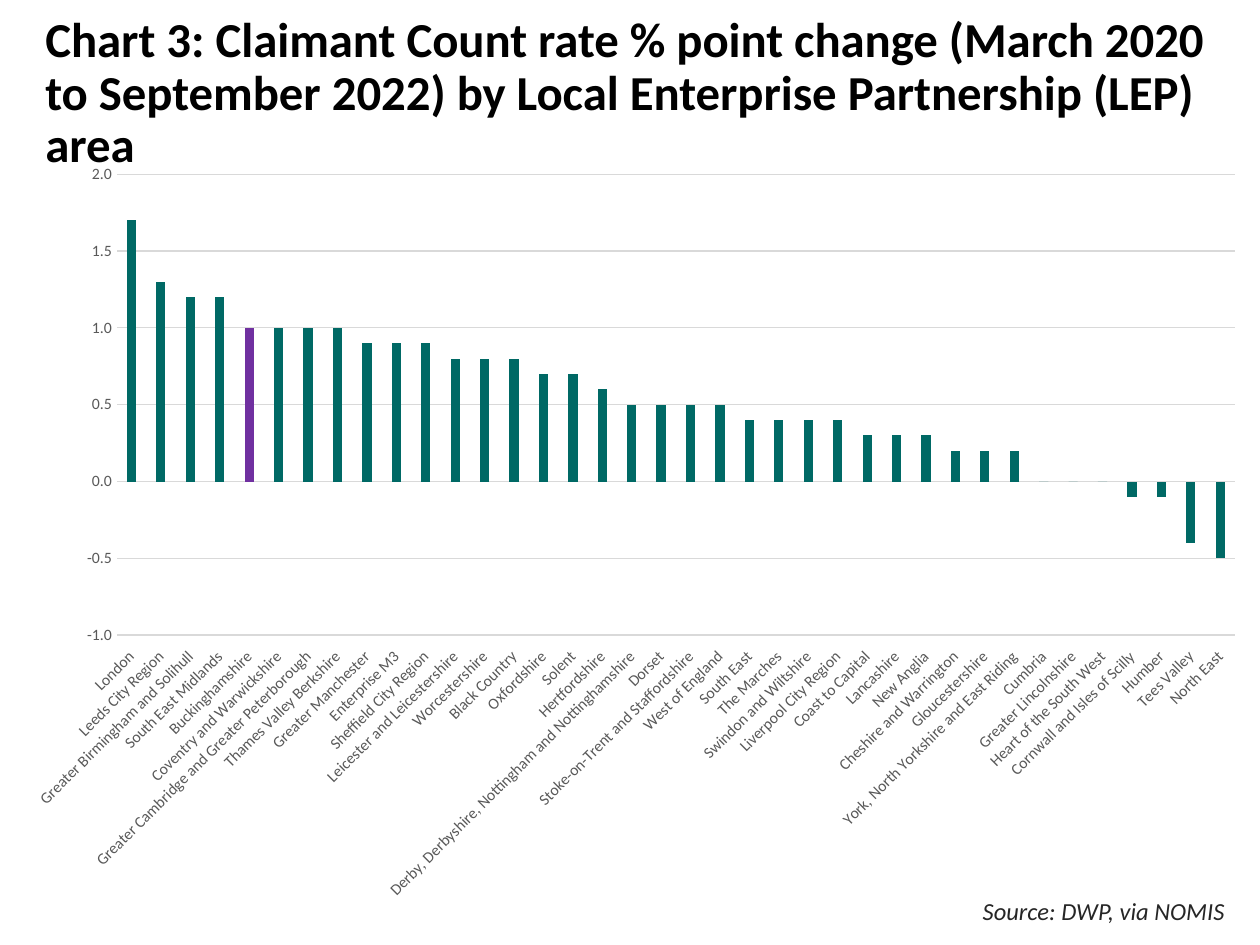
from pptx import Presentation
from pptx.chart.data import CategoryChartData
from pptx.dml.color import RGBColor
from pptx.enum import chart as ch, text
from pptx.util import Cm, Pt

BLACK = RGBColor(0x00, 0x00, 0x00)
DARK = RGBColor(0x26, 0x26, 0x26)
GREY = RGBColor(0x59, 0x59, 0x59)
RULE = RGBColor(0xD9, 0xD9, 0xD9)
TEAL = RGBColor(0x00, 0x69, 0x65)
PURPLE = RGBColor(0x70, 0x30, 0xA0)

HIGHLIGHT = "Buckinghamshire"
AREAS_BY_CHANGE = {
    1.7: ["London"],
    1.3: ["Leeds City Region"],
    1.2: ["Greater Birmingham and Solihull", "South East Midlands"],
    1.0: [HIGHLIGHT, "Coventry and Warwickshire",
          "Greater Cambridge and Greater Peterborough", "Thames Valley Berkshire"],
    0.9: ["Greater Manchester", "Enterprise M3", "Sheffield City Region"],
    0.8: ["Leicester and Leicestershire", "Worcestershire", "Black Country"],
    0.7: ["Oxfordshire", "Solent"],
    0.6: ["Hertfordshire"],
    0.5: ["Derby, Derbyshire, Nottingham and Nottinghamshire", "Dorset",
          "Stoke-on-Trent and Staffordshire", "West of England"],
    0.4: ["South East", "The Marches", "Swindon and Wiltshire", "Liverpool City Region"],
    0.3: ["Coast to Capital", "Lancashire", "New Anglia"],
    0.2: ["Cheshire and Warrington", "Gloucestershire",
          "York, North Yorkshire and East Riding"],
    0.0: ["Cumbria", "Greater Lincolnshire", "Heart of the South West"],
    -0.1: ["Cornwall and Isles of Scilly", "Humber"],
    -0.4: ["Tees Valley"],
    -0.5: ["North East"],
}


class SlideBuilder:
    """Holds the style and the current slide, and adds each kind of element."""

    def __init__(self, slide, font="Calibri"):
        self.slide = slide
        self.font = font

    def style(self, font, size, color, bold=False, italic=False):
        font.name, font.size = self.font, Pt(size)
        font.bold, font.italic = bold, italic
        font.color.rgb = color

    def title(self, wording, left, top, width, height):
        heading = self.slide.shapes.title
        heading.left, heading.top, heading.width, heading.height = map(
            Cm, (left, top, width, height))
        frame = heading.text_frame
        frame.word_wrap = True
        frame.auto_size = text.MSO_AUTO_SIZE.NONE
        frame.vertical_anchor = text.MSO_ANCHOR.MIDDLE
        frame.margin_bottom = Cm(1.2)
        line = frame.paragraphs[0]
        line.alignment = text.PP_ALIGN.LEFT
        line.line_spacing = 0.9
        run = line.add_run()
        run.text = wording
        self.style(run.font, 27.9, BLACK, bold=True)

    def source(self, wording, left, top, width, height):
        frame = self.slide.shapes.add_textbox(
            *map(Cm, (left, top, width, height))).text_frame
        frame.word_wrap = True
        frame.auto_size = text.MSO_AUTO_SIZE.SHAPE_TO_FIT_TEXT
        line = frame.paragraphs[0]
        line.alignment = text.PP_ALIGN.RIGHT
        run = line.add_run()
        run.text = wording
        self.style(run.font, 14, DARK, italic=True)

    def columns(self, areas_by_change, highlight, left, top, width, height):
        pairs = [(area, change) for change, areas in areas_by_change.items()
                 for area in areas]
        areas, changes = zip(*pairs)
        data = CategoryChartData(number_format="#,##0.0")
        data.categories = areas
        data.add_series("Series 1", changes)
        chart = self.slide.shapes.add_chart(
            ch.XL_CHART_TYPE.COLUMN_CLUSTERED,
            *map(Cm, (left, top, width, height)), data).chart
        chart.has_legend = chart.has_title = False
        self.style(chart.font, 10, BLACK)

        plot = chart.plots[0]
        plot.gap_width, plot.overlap = 219, -27
        plot.vary_by_categories = False
        bars = plot.series[0]
        bars.invert_if_negative = False
        for bar, color in ((bars, TEAL), (bars.points[areas.index(highlight)], PURPLE)):
            bar.format.fill.solid()
            bar.format.fill.fore_color.rgb = color

        for axis in (chart.category_axis, chart.value_axis):
            axis.major_tick_mark = axis.minor_tick_mark = ch.XL_TICK_MARK.NONE
            self.style(axis.tick_labels.font, 9, GREY)
        area_axis, change_axis = chart.category_axis, chart.value_axis
        area_axis.tick_label_position = ch.XL_TICK_LABEL_POSITION.LOW
        body = area_axis.tick_labels.font._element.getparent().getparent().getparent().bodyPr
        body.set("rot", "-2700000")
        body.set("vert", "horz")
        change_axis.minimum_scale, change_axis.maximum_scale = -1, 2
        change_axis.major_unit = 0.5
        change_axis.tick_labels.number_format = "#,##0.0"
        change_axis.tick_labels.number_format_is_linked = False
        change_axis.format.line.fill.background()
        for rule in (area_axis.format.line, change_axis.major_gridlines.format.line):
            rule.color.rgb = RULE
            rule.width = Pt(0.75)


def main():
    deck = Presentation()
    deck.slide_width, deck.slide_height = Cm(25.4), Cm(19.05)
    builder = SlideBuilder(deck.slides.add_slide(deck.slide_layouts[5]))
    builder.title(
        "Chart 3: Claimant Count rate % point change (March 2020 to September 2022) "
        "by Local Enterprise Partnership (LEP) area", 0.66, 1.14, 24.08, 2.6)
    builder.source("Source: DWP, via NOMIS", 18.9, 17.93, 6.04, 0.86)
    builder.columns(AREAS_BY_CHANGE, HIGHLIGHT, 0.23, 3.02, 25.17, 15.42)
    deck.save("out.pptx")


if __name__ == "__main__":
    main()
